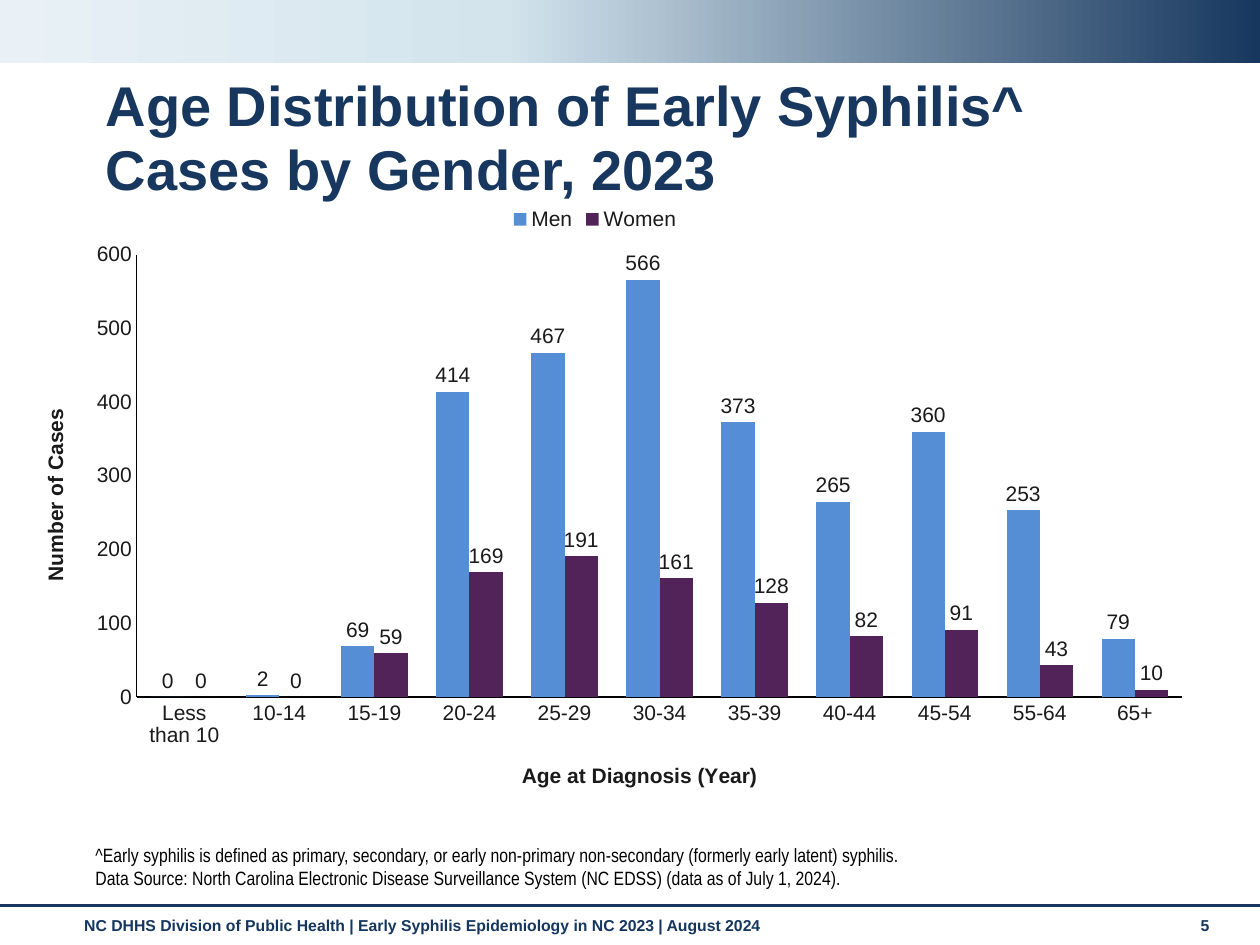
from dataclasses import dataclass

from lxml import etree
from pptx import Presentation
from pptx.chart.data import CategoryChartData
from pptx.dml.color import RGBColor
from pptx.enum.chart import XL_CHART_TYPE, XL_LABEL_POSITION, XL_LEGEND_POSITION, XL_TICK_MARK
from pptx.enum.shapes import MSO_CONNECTOR, MSO_SHAPE
from pptx.enum.text import MSO_ANCHOR
from pptx.oxml import parse_xml
from pptx.oxml.ns import nsdecls, qn
from pptx.util import Inches, Pt

CLUSTERED = XL_CHART_TYPE.COLUMN_CLUSTERED
OUTSIDE_END = XL_LABEL_POSITION.OUTSIDE_END
LEGEND_TOP = XL_LEGEND_POSITION.TOP
NO_TICK = XL_TICK_MARK.NONE
STRAIGHT = MSO_CONNECTOR.STRAIGHT
RECTANGLE = MSO_SHAPE.RECTANGLE
TOP, BOTTOM = MSO_ANCHOR.TOP, MSO_ANCHOR.BOTTOM

WIDTH, HEIGHT = Inches(10), Inches(7.5)
COLUMNS, ROWS = 100, 75
NAVY, BLACK, INK = "17375E", "000000", "1A1A1A"


@dataclass(frozen=True)
class Area:
    column: float
    row: float
    columns: float
    rows: float

    def lengths(self) -> tuple[int, int, int, int]:
        return (
            round(WIDTH * self.column / COLUMNS),
            round(HEIGHT * self.row / ROWS),
            round(WIDTH * self.columns / COLUMNS),
            round(HEIGHT * self.rows / ROWS),
        )


@dataclass(frozen=True)
class TextBlock:
    area: Area
    lines: tuple[str, ...]
    font: dict
    color: str
    anchor: MSO_ANCHOR = TOP
    spacing: float = 1.0


@dataclass(frozen=True)
class CaseSeries:
    name: str
    color: str
    cases: tuple[int, ...]


FOOTER_FONT = {"name": "Arial", "size": Pt(9), "bold": True}
TEXT_BLOCKS = (
    TextBlock(
        Area(5.7, 72.2, 87.4, 2.9),
        ("NC DHHS Division of Public Health | Early Syphilis Epidemiology in NC 2023 | August 2024",),
        FOOTER_FONT,
        "15365E",
    ),
    TextBlock(Area(94.3, 72.2, 4.4, 3), ("5",), FOOTER_FONT, "15365E"),
    TextBlock(
        Area(7.4, 5.5, 85.8, 6),
        ("Age Distribution of Early Syphilis^ Cases by Gender, 2023",),
        {"name": "Arial", "size": Pt(32), "bold": True},
        NAVY,
        spacing=0.95,
    ),
    TextBlock(
        Area(6.6, 65.7, 87.4, 5.4),
        (
            "^Early syphilis is defined as primary, secondary, or early non-primary non-secondary (formerly early latent) syphilis.",
            "Data Source: North Carolina Electronic Disease Surveillance System (NC EDSS) (data as of July 1, 2024).",
        ),
        {"name": "Arial Narrow", "size": Pt(11), "bold": False},
        BLACK,
        anchor=BOTTOM,
    ),
)

AGES = (
    "Less than 10", "10-14", "15-19", "20-24", "25-29", "30-34",
    "35-39", "40-44", "45-54", "55-64", "65+",
)
SERIES = (
    CaseSeries("Men", "558ED5", (0, 2, 69, 414, 467, 566, 373, 265, 360, 253, 79)),
    CaseSeries("Women", "522358", (0, 0, 59, 169, 191, 161, 128, 82, 91, 43, 10)),
)


def rgb(value: str) -> RGBColor:
    return RGBColor.from_string(value)


def apply_font(font, values: dict, color: str) -> None:
    for name, value in values.items():
        setattr(font, name, value)
    font.color.rgb = rgb(color)


def draw_band(page, area: Area, stops: dict[int, str]) -> None:
    band = page.shapes.add_shape(RECTANGLE, *area.lengths())
    band.shadow.inherit = False
    band.line.fill.background()
    band.fill.gradient()
    band.fill.gradient_angle = 0
    stop_list = band.fill._fill._gradFill.find(qn("a:gsLst"))
    for stop in list(stop_list):
        stop_list.remove(stop)
    for share, color in stops.items():
        stop = etree.SubElement(stop_list, qn("a:gs"), pos=str(share * 1000))
        etree.SubElement(stop, qn("a:srgbClr"), val=color)


def draw_rule(page, area: Area, color: str, weight: float) -> None:
    left, top, width, height = area.lengths()
    rule = page.shapes.add_connector(STRAIGHT, left, top, left + width, top + height)
    rule.line.color.rgb = rgb(color)
    rule.line.width = Pt(weight)
    etree.SubElement(rule._element.spPr, qn("a:effectLst"))


def draw_text(page, block: TextBlock) -> None:
    frame = page.shapes.add_textbox(*block.area.lengths()).text_frame
    frame.word_wrap = True
    frame.vertical_anchor = block.anchor
    for index, line in enumerate(block.lines):
        para = frame.add_paragraph() if index else frame.paragraphs[0]
        para.line_spacing = block.spacing
        span = para.add_run()
        span.text = line
        apply_font(span.font, block.font, block.color)


def style_axis(axis, title: str) -> None:
    values = {
        "has_major_gridlines": False,
        "major_tick_mark": NO_TICK,
        "minor_tick_mark": NO_TICK,
    }
    for name, value in values.items():
        setattr(axis, name, value)
    axis.format.line.color.rgb = rgb(BLACK)
    axis.format.line.width = Pt(0.75)
    span = axis.axis_title.text_frame.paragraphs[0].add_run()
    span.text = title
    apply_font(span.font, {"name": "Arial", "size": Pt(12), "bold": True}, INK)


def place_plot(chart, shares: dict[str, float]) -> None:
    plot_area = chart._chartSpace.chart.plotArea
    for layout in plot_area.findall(qn("c:layout")):
        plot_area.remove(layout)
    settings = {"layoutTarget": "inner", "xMode": "edge", "yMode": "edge", **shares}
    content = "".join(f'<c:{name} val="{value}"/>' for name, value in settings.items())
    plot_area.insert(0, parse_xml(
        f'<c:layout {nsdecls("c")}><c:manualLayout>{content}</c:manualLayout></c:layout>'
    ))


def draw_chart(page, area: Area) -> None:
    data = CategoryChartData()
    data.categories = AGES
    for group in SERIES:
        data.add_series(group.name, group.cases)
    chart = page.shapes.add_chart(CLUSTERED, *area.lengths(), data).chart
    apply_font(chart.font, {"name": "Arial", "size": Pt(12)}, INK)
    chart.has_title = False
    chart.has_legend = True
    chart.legend.position = LEGEND_TOP
    chart.legend.include_in_layout = False
    style_axis(chart.category_axis, "Age at Diagnosis (Year)")
    style_axis(chart.value_axis, "Number of Cases")
    scale = {"minimum_scale": 0, "maximum_scale": 600, "major_unit": 100}
    for name, value in scale.items():
        setattr(chart.value_axis, name, value)
    plot = chart.plots[0]
    for name, value in {"gap_width": 86, "overlap": 0, "vary_by_categories": False}.items():
        setattr(plot, name, value)
    for group, series in zip(SERIES, plot.series):
        series.format.fill.solid()
        series.format.fill.fore_color.rgb = rgb(group.color)
        series.data_labels.show_value = True
        series.data_labels.position = OUTSIDE_END
    place_plot(chart, {"x": 0.11, "y": 0.1, "w": 0.89, "h": 0.73})


def main() -> None:
    deck = Presentation()
    deck.slide_width, deck.slide_height = WIDTH, HEIGHT
    page = deck.slides.add_slide(deck.slide_layouts[6])
    draw_band(page, Area(0, 0, COLUMNS, 5), {0: "E9F1F6", 40: "D3E4ED", 100: NAVY})
    draw_rule(page, Area(0, 71.9, COLUMNS, 0), NAVY, 1.75)
    draw_chart(page, Area(0.6, 15.4, 93.3, 48.1))
    for block in TEXT_BLOCKS:
        draw_text(page, block)
    deck.save("out.pptx")


if __name__ == "__main__":
    main()
